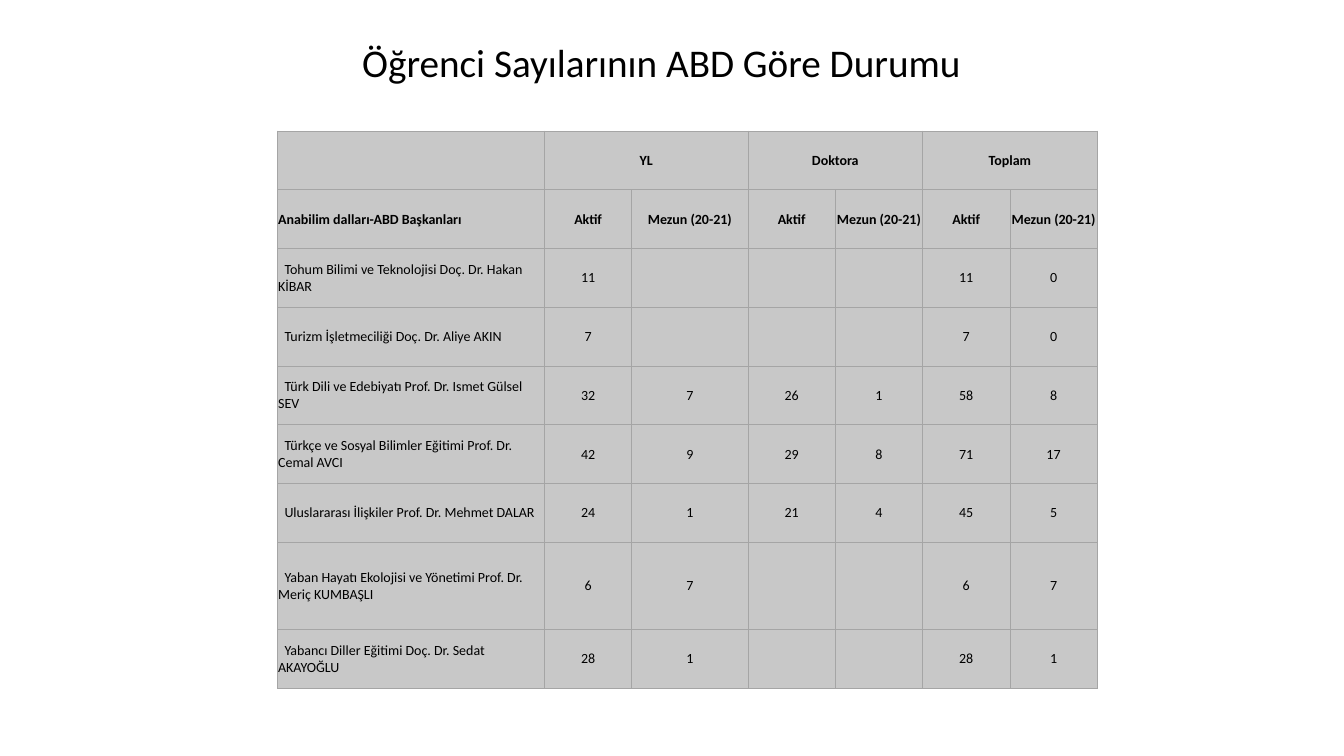
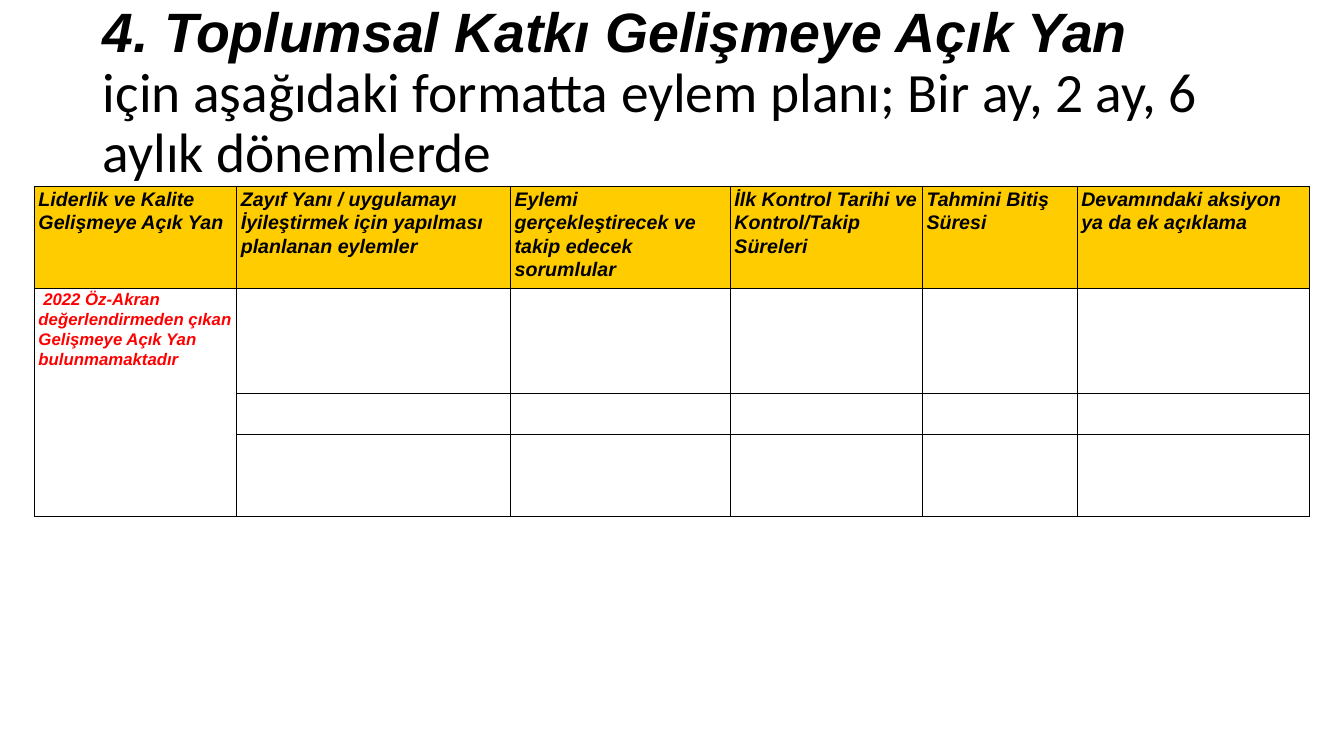
import pptx
import pptx.dml.color
import pptx.enum.text
import pptx.oxml
import pptx.oxml.ns
import pptx.util

Cm = pptx.util.Cm
Pt = pptx.util.Pt
ALIGN = pptx.enum.text.PP_ALIGN
ANCHOR = pptx.enum.text.MSO_ANCHOR

BLACK, RED = "000000", "FF0000"
GREY, GREY_LINE, AMBER = "C8C8C8", "A5A5A5", "FFCC00"


def color(hex_code):
    return pptx.dml.color.RGBColor.from_string(hex_code)


class Deck:
    """Holds the shared style and the slide being built."""

    title_only_layout = 5

    def __init__(self):
        self.presentation = pptx.Presentation()
        self.presentation.slide_width = Cm(33.87)
        self.presentation.slide_height = Cm(19.05)
        self.slide = None

    def add_slide(self):
        layout = self.presentation.slide_layouts[self.title_only_layout]
        self.slide = self.presentation.slides.add_slide(layout)

    def add_text_run(self, paragraph, text, size, font="Calibri", bold=False, italic=False,
                     ink=BLACK):
        run = paragraph.add_run()
        run.text = text
        run.font.size = Pt(size)
        run.font.name = font
        run.font.bold = bold
        run.font.italic = italic
        run.font.color.rgb = color(ink)

    def title(self, lines, left, top, width, height, align):
        """Fill the title placeholder; each line is a text and its run style."""
        title = self.slide.shapes.title
        title.left, title.top, title.width, title.height = map(Cm, (left, top, width, height))
        frame = title.text_frame
        frame.word_wrap = True
        frame.auto_size = pptx.enum.text.MSO_AUTO_SIZE.NONE
        frame.vertical_anchor = ANCHOR.MIDDLE
        paragraph = frame.paragraphs[0]
        paragraph.alignment = align
        paragraph.line_spacing = 0.9
        for number, (text, style) in enumerate(lines):
            if number:
                paragraph.add_line_break()
            self.add_text_run(paragraph, text, **style)

    def table(self, left, top, widths, heights, line, line_width, side_margin, anchor):
        """Add an empty bordered table without the default banding."""
        table = self.slide.shapes.add_table(
            len(heights), len(widths), Cm(left), Cm(top), Cm(sum(widths)), Cm(sum(heights))
        ).table
        table.first_row = table.horz_banding = False
        for column, width in zip(table.columns, widths):
            column.width = Cm(width)
        for row, height in zip(table.rows, heights):
            row.height = Cm(height)
        for cell in table.iter_cells():
            cell.margin_left = cell.margin_right = Cm(side_margin)
            cell.margin_top, cell.margin_bottom = Cm(0.02), 0
            cell.vertical_anchor = anchor
            cell.fill.background()
            self.borders(cell, line, line_width)
        return table

    def borders(self, cell, line, line_width):
        properties = cell._tc.get_or_add_tcPr()
        for position, side in enumerate(("lnL", "lnR", "lnT", "lnB")):
            border = pptx.oxml.parse_xml(
                f'<a:{side} {pptx.oxml.ns.nsdecls("a")} w="{Pt(line_width)}">'
                f'<a:solidFill><a:srgbClr val="{line}"/></a:solidFill></a:{side}>'
            )
            properties.insert(position, border)

    def shade(self, cell, fill):
        cell.fill.solid()
        cell.fill.fore_color.rgb = color(fill)

    def cell_text(self, cell, text, align=ALIGN.LEFT, indent=0, spacing=None, after=0, **style):
        """Put one paragraph in a cell; indent moves its first line, in cm."""
        paragraph = cell.text_frame.paragraphs[0]
        paragraph.alignment = align
        paragraph.line_spacing = spacing
        paragraph.space_after = Pt(after)
        if indent:
            paragraph._p.get_or_add_pPr().set("indent", str(Cm(indent)))
        self.add_text_run(paragraph, text, **style)


def student_numbers(deck):
    deck.add_slide()
    deck.title([("Öğrenci Sayılarının ABD Göre Durumu", {"size": 28})],
               2.06, 0.46, 29.21, 2.36, ALIGN.CENTER)

    degrees = ["YL", "Doktora", "Toplam"]
    departments = [
        ("Tohum Bilimi ve Teknolojisi Doç. Dr. Hakan KİBAR", 11, "", "", "", 11, 0),
        ("Turizm İşletmeciliği Doç. Dr. Aliye AKIN", 7, "", "", "", 7, 0),
        ("Türk Dili ve Edebiyatı Prof. Dr. Ismet Gülsel SEV", 32, 7, 26, 1, 58, 8),
        ("Türkçe ve Sosyal Bilimler Eğitimi Prof. Dr. Cemal AVCI", 42, 9, 29, 8, 71, 17),
        ("Uluslararası İlişkiler Prof. Dr. Mehmet DALAR", 24, 1, 21, 4, 45, 5),
        ("Yaban Hayatı Ekolojisi ve Yönetimi Prof. Dr. Meriç KUMBAŞLI", 6, 7, "", "", 6, 7),
        ("Yabancı Diller Eğitimi Doç. Dr. Sedat AKAYOĞLU", 28, 1, "", "", 28, 1),
    ]
    degree_row = [""]
    for degree in degrees:
        degree_row += [degree, ""]
    status_row = ["Anabilim dalları-ABD Başkanları"] + ["Aktif", "Mezun (20-21)"] * len(degrees)
    rows = [degree_row, status_row, *departments]
    header_count = 2

    heights = [1.48] * 7 + [2.2, 1.48]
    widths = [6.73, 2.2, 2.93] + [2.2] * 4
    counts = deck.table(6.99, 3.3, widths, heights, GREY_LINE, 0.5, 0.02, ANCHOR.MIDDLE)
    for row, values in enumerate(rows):
        is_header = row < header_count
        for column, value in enumerate(values):
            cell = counts.cell(row, column)
            deck.shade(cell, GREY)
            if value == "":
                continue
            deck.cell_text(cell, str(value), ALIGN.CENTER if column else ALIGN.LEFT,
                           indent=0 if column or is_header else 0.16, size=10, bold=is_header)
    for column in range(1, len(widths), 2):
        counts.cell(0, column).merge(counts.cell(0, column + 1))


def action_plan(deck):
    deck.add_slide()
    emphasis = {"font": "Arial", "bold": True, "italic": True}
    deck.title(
        [("4. Toplumsal Katkı Gelişmeye Açık Yan", {"size": 39.6, **emphasis}),
         ("için aşağıdaki formatta eylem planı; Bir ay, 2 ay, 6 aylık dönemlerde", {"size": 39.6})],
        2.34, 1.02, 29.21, 2.74, ALIGN.LEFT)

    headings = [
        "Liderlik ve Kalite Gelişmeye Açık Yan",
        "Zayıf Yanı / uygulamayı İyileştirmek için yapılması planlanan eylemler",
        "Eylemi gerçekleştirecek ve takip edecek sorumlular",
        "İlk Kontrol Tarihi ve Kontrol/Takip Süreleri",
        "Tahmini Bitiş Süresi",
        "Devamındaki aksiyon ya da ek açıklama",
    ]
    widths = [5.1, 6.9, 5.54, 4.84, 3.9, 5.85]
    heights = [2.57, 2.64, 1.04, 2.06]
    plan = deck.table(0.87, 4.7, widths, heights, BLACK, 1, 0.1, ANCHOR.TOP)
    spaced = {"spacing": 1.06, "after": 8, **emphasis}
    for column, heading in enumerate(headings):
        cell = plan.cell(0, column)
        deck.shade(cell, AMBER)
        deck.cell_text(cell, heading, size=14, **spaced)
    finding = plan.cell(1, 0)
    finding.merge(plan.cell(len(heights) - 1, 0))
    deck.cell_text(finding, "2022 Öz-Akran değerlendirmeden çıkan Gelişmeye Açık Yan bulunmamaktadır",
                   indent=0.12, size=12, ink=RED, **spaced)


def main():
    deck = Deck()
    student_numbers(deck)
    action_plan(deck)
    deck.presentation.save("out.pptx")


if __name__ == "__main__":
    main()
